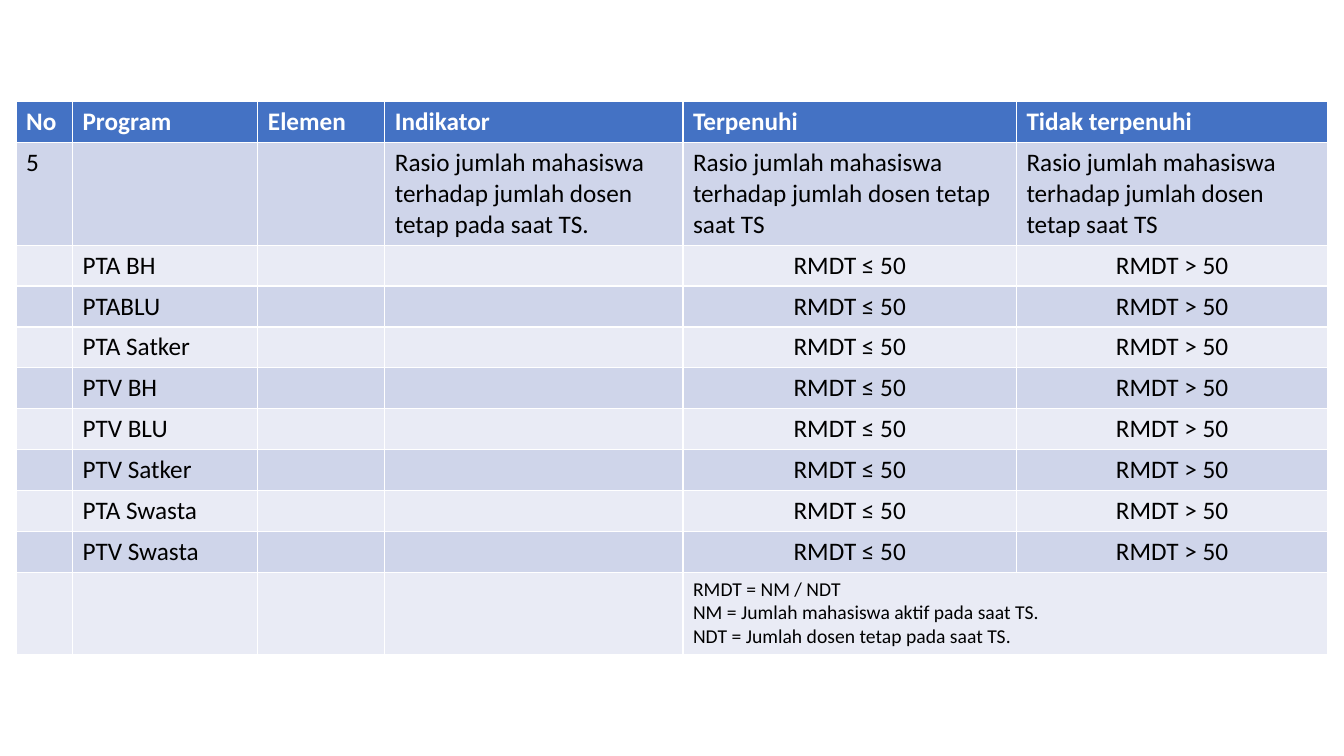
from pptx import Presentation
from pptx.dml.color import RGBColor
from pptx.enum import text
from pptx.util import Inches, Pt

HUES = {"head": "4472C4", "odd": "CFD5EA", "even": "E9EBF5",
        "light": "FFFFFF", "dark": "000000"}
COLS = [0.56, 1.84, 1.26, 2.96, 3.31, 3.09]
UNIT = 0.406
HEADS = ["No", "Program", "Elemen", "Indikator", "Terpenuhi", "Tidak terpenuhi"]
RATIO = "Rasio jumlah mahasiswa terhadap jumlah dosen tetap"
TYPES = ["PTA BH", "PTABLU", "PTA Satker", "PTV BH", "PTV BLU",
         "PTV Satker", "PTA Swasta", "PTV Swasta"]
NOTES = ["RMDT = NM / NDT", "NM = Jumlah mahasiswa aktif pada saat TS.",
         "NDT = Jumlah dosen tetap pada saat TS."]


def hue(name):
    """Return the named colour."""
    return RGBColor.from_string(HUES[name])


def fill_cell(cell, words, back, ink="dark", size=18, bold=False, align=None):
    """Fill one cell with colour and styled text."""
    cell.fill.solid()
    cell.fill.fore_color.rgb = hue(back)
    cell.text = words
    for para in cell.text_frame.paragraphs:
        para.alignment = align
        font = para.font
        font.name, font.size, font.bold = "Calibri", Pt(size), bold
        font.color.rgb = hue(ink)


def draw_table(slide, left, top, width, unit):
    """Draw the ratio table with rows sized in multiples of one unit."""
    rows = [HEADS,
            ["5", "", "", f"{RATIO} pada saat TS."] + [f"{RATIO} saat TS"] * 2]
    rows += [["", kind, "", "", "RMDT ≤ 50", "RMDT > 50"] for kind in TYPES]
    rows.append([""] * 4 + ["\n".join(NOTES), ""])
    spans = [1, 2.5] + [1] * len(TYPES) + [2]
    table = slide.shapes.add_table(
        len(rows), len(COLS), Inches(left), Inches(top),
        Inches(width), Inches(unit * sum(spans))).table
    for col, share in zip(table.columns, COLS):
        col.width = Inches(width * share / sum(COLS))
    last = len(rows) - 1
    for r, row in enumerate(rows):
        table.rows[r].height = Inches(unit * spans[r])
        for c, words in enumerate(row):
            style = {"back": "odd" if r % 2 else "even"}
            if r == 0:
                style = {"back": "head", "ink": "light", "bold": True}
            elif c > 3 and r == last:
                style.update(size=14, align=text.PP_ALIGN.JUSTIFY)
            elif c > 3 and r > 1:
                style["align"] = text.PP_ALIGN.CENTER
            fill_cell(table.cell(r, c), words, **style)
    table.cell(last, 4).merge(table.cell(last, 5))


def main():
    """Build and save the slide."""
    deck = Presentation()
    deck.slide_width, deck.slide_height = Inches(13.33), Inches(7.5)
    slide = deck.slides.add_slide(deck.slide_layouts[6])
    draw_table(slide, 0.16, 1.01, 13.01, UNIT)
    deck.save("out.pptx")


if __name__ == "__main__":
    main()
